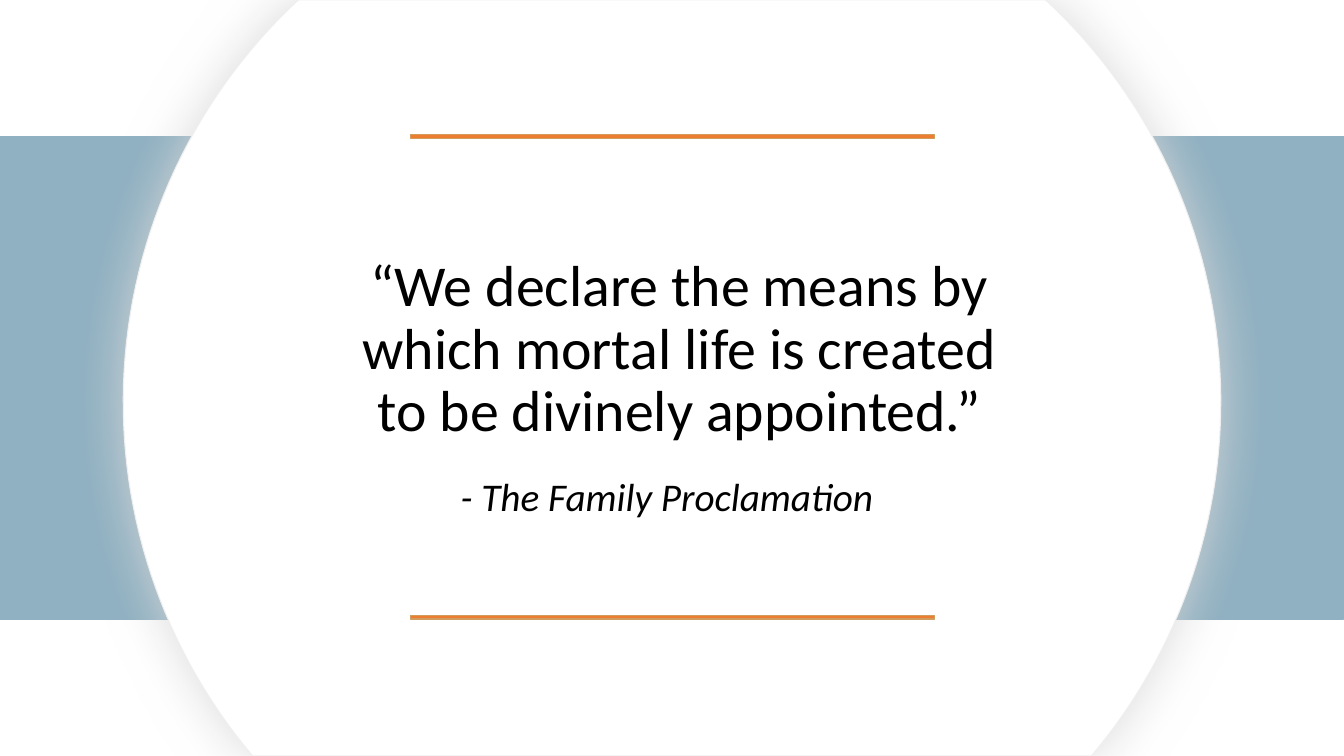
from math import asin, cos, pi, sin

from lxml.etree import SubElement
from pptx import Presentation
from pptx.dml.color import RGBColor
from pptx.enum.shapes import MSO_SHAPE
from pptx.enum.text import MSO_ANCHOR, MSO_AUTO_SIZE, PP_ALIGN
from pptx.oxml.ns import qn
from pptx.util import Cm, Pt

WHITE = RGBColor(0xFF, 0xFF, 0xFF)
BLACK = RGBColor(0x00, 0x00, 0x00)
BLUE = RGBColor(0x90, 0xB1, 0xC2)
ORANGE = RGBColor(0xED, 0x7D, 0x31)
TAN = RGBColor(0xD0, 0x9D, 0x5C)
PALE_GREY = RGBColor(0xEF, 0xEF, 0xEF)
SHADOW_GREY = RGBColor(0xD8, 0xD8, 0xD8)

PAGE_WIDTH, PAGE_HEIGHT = Cm(33.87), Cm(19.05)
DISC_CENTRE_X, DISC_CENTRE_Y, DISC_RADIUS = PAGE_WIDTH / 2, Cm(10.13), Cm(13.83)
ARC_STEPS = 60


def set_all(target, values):
    for name, value in values.items():
        setattr(target, name, value)


def paint(shape, fill, line):
    shape.shadow.inherit = False
    shape.fill.solid()
    shape.fill.fore_color.rgb = fill
    shape.line.color.rgb = line
    shape.line.width = Pt(0.75)


def add_bar(page, left, top, width, height, fill, line):
    bar = page.shapes.add_shape(MSO_SHAPE.RECTANGLE, left, top, width, height)
    paint(bar, fill, line)


def add_soft_shadow(shape, colour, blur, opacity):
    effects = shape._element.spPr.find(qn("a:effectLst"))
    shadow = SubElement(effects, qn("a:outerShdw"), blurRad=str(blur),
                        dist="0", dir="0", algn="ctr", rotWithShape="0")
    tint = SubElement(shadow, qn("a:srgbClr"), val=str(colour))
    SubElement(tint, qn("a:alpha"), val=str(opacity * 1000))


def add_disc(page):
    """Add the large circle, cut off at the top and bottom of the page."""
    upper = -asin(DISC_CENTRE_Y / DISC_RADIUS)
    lower = asin((PAGE_HEIGHT - DISC_CENTRE_Y) / DISC_RADIUS)
    step = (lower - upper) / ARC_STEPS
    right_arc = [upper + step * i for i in range(ARC_STEPS + 1)]
    left_arc = [pi - angle for angle in reversed(right_arc)]
    points = [(round(DISC_CENTRE_X + DISC_RADIUS * cos(angle)),
               round(DISC_CENTRE_Y + DISC_RADIUS * sin(angle)))
              for angle in right_arc + left_arc]
    builder = page.shapes.build_freeform(*points[0])
    builder.add_line_segments(points[1:], close=True)
    disc = builder.convert_to_shape()
    paint(disc, WHITE, PALE_GREY)
    add_soft_shadow(disc, SHADOW_GREY, Pt(37), 89)


def write(box, text, place, frame_format, spacing, font_format):
    set_all(box, dict(zip(("left", "top", "width", "height"), place)))
    frame = box.text_frame
    set_all(frame, {"word_wrap": True, **frame_format})
    para = frame.paragraphs[0]
    set_all(para, {"alignment": PP_ALIGN.CENTER, "line_spacing": spacing})
    span = para.add_run()
    span.text = text
    set_all(span.font, {"name": "Calibri", **font_format})
    span.font.color.rgb = BLACK


def main():
    deck = Presentation()
    set_all(deck, {"slide_width": PAGE_WIDTH, "slide_height": PAGE_HEIGHT})
    page = deck.slides.add_slide(deck.slide_layouts[5])
    quote = page.shapes.title

    add_bar(page, 0, Cm(3.43), PAGE_WIDTH, Cm(12.17), BLUE, BLUE)
    add_disc(page)
    page.shapes._spTree.append(quote._element)  # in front of the disc
    write(quote,
          "“We declare the means by which mortal life is created "
          "to be divinely appointed.”",
          (Cm(8.71), Cm(4.65), Cm(16.81), Cm(8.36)),
          {"vertical_anchor": MSO_ANCHOR.MIDDLE, "auto_size": MSO_AUTO_SIZE.NONE},
          0.9, {"size": Pt(41.3)})
    for top in (Cm(3.4), Cm(15.52)):
        add_bar(page, Cm(10.34), top, Cm(13.21), Cm(0.08), ORANGE, TAN)

    place = (Cm(9.63), Cm(11.48), Cm(14.35), Cm(1.88))
    write(page.shapes.add_textbox(*place), "- The Family Proclamation", place,
          {"vertical_anchor": MSO_ANCHOR.TOP,
           "auto_size": MSO_AUTO_SIZE.SHAPE_TO_FIT_TEXT,
           "margin_top": Cm(0.25), "margin_bottom": Cm(0.25)},
          1.15, {"size": Pt(28), "italic": True})
    deck.save("out.pptx")


if __name__ == "__main__":
    main()
